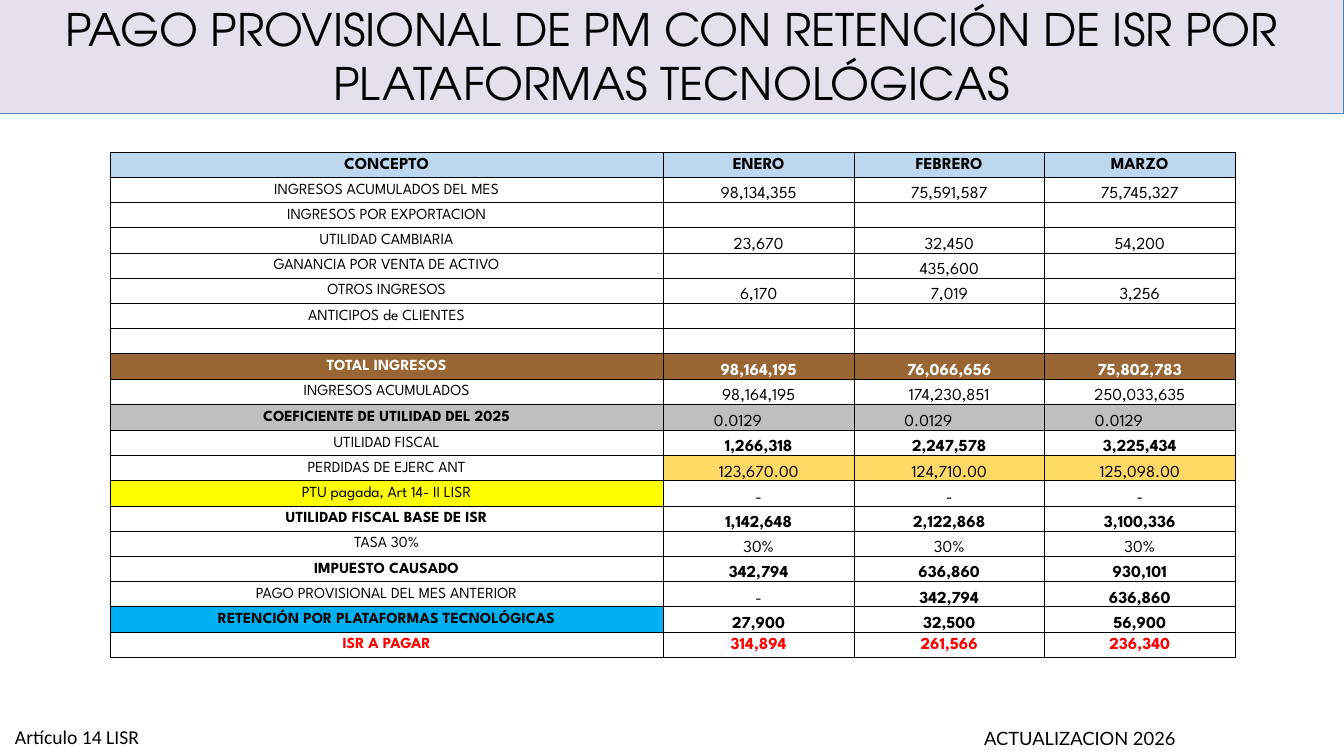
from lxml import etree
from pptx import Presentation
from pptx.dml.color import RGBColor
from pptx.enum import shapes, text
from pptx.oxml.ns import qn
from pptx.util import Inches, Pt

BLACK = RGBColor(0x00, 0x00, 0x00)
WHITE = RGBColor(0xFF, 0xFF, 0xFF)
RED = RGBColor(0xFF, 0x00, 0x00)
LILAC = RGBColor(0xE6, 0xE0, 0xEC)
BLUE = RGBColor(0x4F, 0x81, 0xBD)
PALE_BLUE = RGBColor(0xBD, 0xD7, 0xEE)
BROWN = RGBColor(0x99, 0x66, 0x33)
GRAY = RGBColor(0xBF, 0xBF, 0xBF)
GOLD = RGBColor(0xFF, 0xD9, 0x66)
YELLOW = RGBColor(0xFF, 0xFF, 0x00)
SKY = RGBColor(0x00, 0xB0, 0xF0)

HEADER = "CONCEPTO"
COEFFICIENT = "COEFICIENTE DE UTILIDAD DEL 2025"
TOTAL = "TOTAL INGRESOS"
PAYABLE = "ISR A PAGAR"
LOSSES = "PERDIDAS DE EJERC ANT"
PTU = "PTU pagada, Art 14- II LISR"
WITHHELD = "RETENCIÓN POR PLATAFORMAS TECNOLÓGICAS"
PREVIOUS = "PAGO PROVISIONAL DEL MES ANTERIOR"
PROFIT = "UTILIDAD FISCAL"
BASE = "UTILIDAD FISCAL BASE DE ISR"
TAX = "IMPUESTO CAUSADO"

# Concept followed by January, February and March
ROWS = [
    (HEADER, "ENERO", "FEBRERO", "MARZO"),
    ("INGRESOS ACUMULADOS DEL MES", "98,134,355", "75,591,587", "75,745,327"),
    ("INGRESOS POR EXPORTACION", "", "", ""),
    ("UTILIDAD CAMBIARIA", "23,670", "32,450", "54,200"),
    ("GANANCIA POR VENTA DE ACTIVO", "", "435,600", ""),
    ("OTROS INGRESOS", "6,170", "7,019", "3,256"),
    ("ANTICIPOS de CLIENTES", "", "", ""),
    ("", "", "", ""),
    (TOTAL, "98,164,195", "76,066,656", "75,802,783"),
    ("INGRESOS ACUMULADOS", "98,164,195", "174,230,851", "250,033,635"),
    (COEFFICIENT, "0.0129", "0.0129", "0.0129"),
    (PROFIT, "1,266,318", "2,247,578", "3,225,434"),
    (LOSSES, "123,670.00", "124,710.00", "125,098.00"),
    (PTU, "-", "-", "-"),
    (BASE, "1,142,648", "2,122,868", "3,100,336"),
    ("TASA 30%", "30%", "30%", "30%"),
    (TAX, "342,794", "636,860", "930,101"),
    (PREVIOUS, "-", "342,794", "636,860"),
    (WITHHELD, "27,900", "32,500", "56,900"),
    (PAYABLE, "314,894", "261,566", "236,340"),
]

# Fills of the concept cell and of the month cells, where not white
CONCEPT_FILLS = {HEADER: PALE_BLUE, TOTAL: BROWN, COEFFICIENT: GRAY,
                 PTU: YELLOW, WITHHELD: SKY}
MONTH_FILLS = {HEADER: PALE_BLUE, TOTAL: BROWN, COEFFICIENT: GRAY, LOSSES: GOLD}
TEXT_COLORS = {TOTAL: WHITE, PAYABLE: RED}
BOLD_CONCEPTS = {HEADER, TOTAL, COEFFICIENT, BASE, TAX, WITHHELD, PAYABLE}
BOLD_MONTHS = {HEADER, TOTAL, PROFIT, BASE, TAX, PREVIOUS, WITHHELD, PAYABLE}


def write(frame, words, font_name, size, color=BLACK, bold=False, align=None):
    paragraph = frame.paragraphs[0]
    paragraph.text = words
    paragraph.alignment = align
    font = paragraph.font
    font.name, font.size, font.bold = font_name, Pt(size), bold
    font.color.rgb = color
    if not words:  # keeps an empty row from growing
        paragraph._p.get_or_add_endParaRPr().set("sz", str(size * 100))


def set_margins(box, left, top, right, bottom):
    box.margin_left, box.margin_top = Inches(left), Inches(top)
    box.margin_right, box.margin_bottom = Inches(right), Inches(bottom)


def add_title(slide, words):
    band = slide.shapes.add_shape(shapes.MSO_SHAPE.RECTANGLE, Inches(0),
                                  Inches(-0.03), Inches(13.33), Inches(1.16))
    band.shadow.inherit = False
    band.fill.solid()
    band.fill.fore_color.rgb = LILAC
    band.line.color.rgb = BLUE
    band.line.width = Pt(0.75)
    frame = band.text_frame
    frame.word_wrap = True
    frame.vertical_anchor = text.MSO_ANCHOR.MIDDLE
    set_margins(frame, 0.13, 0.06, 0.13, 0.06)
    write(frame, words, "TeX Gyre Adventor", 32, align=text.PP_ALIGN.CENTER)


def add_note(slide, words, left, top, width, font_name, size, inset):
    note = slide.shapes.add_textbox(Inches(left), Inches(top),
                                    Inches(width), Inches(0.34))
    frame = note.text_frame
    frame.word_wrap = True
    set_margins(frame, inset, 0.05, inset, 0.05)
    write(frame, words, font_name, size)


def add_borders(cell):
    properties = cell._tc.get_or_add_tcPr()
    for side in ("a:lnL", "a:lnR", "a:lnT", "a:lnB"):
        border = etree.SubElement(properties, qn(side), w=str(Pt(0.5)))
        fill = etree.SubElement(border, qn("a:solidFill"))
        etree.SubElement(fill, qn("a:srgbClr"), val=str(BLACK))


def fill_cell(cell, concept, column, words):
    is_month = column > 0
    is_header = concept == HEADER
    is_coefficient = is_month and concept == COEFFICIENT
    bold = concept in (BOLD_MONTHS if is_month else BOLD_CONCEPTS) and words != "-"
    fills = MONTH_FILLS if is_month else CONCEPT_FILLS

    add_borders(cell)
    cell.fill.solid()
    cell.fill.fore_color.rgb = fills.get(concept, WHITE)
    set_margins(cell, 0.5 if is_coefficient else 0.01, 0.01, 0.01, 0)
    at_bottom = is_month and concept not in (HEADER, PAYABLE)
    cell.vertical_anchor = (text.MSO_ANCHOR.BOTTOM if at_bottom
                            else text.MSO_ANCHOR.MIDDLE)
    write(cell.text_frame, words, "League Spartan",
          12 if words and (is_month or is_header) else 11,
          TEXT_COLORS.get(concept, BLACK), bold,
          text.PP_ALIGN.LEFT if is_coefficient else text.PP_ALIGN.CENTER)


def add_payments_table(slide):
    table = slide.shapes.add_table(len(ROWS), 4, Inches(1.09), Inches(1.51),
                                   Inches(11.16), Inches(5.01)).table
    for column, width in zip(table.columns, (5.49, 1.89, 1.89, 1.89)):
        column.width = Inches(width)
    for row, values in zip(table.rows, ROWS):
        concept = values[0]
        row.height = Inches(0.26 if concept == COEFFICIENT else 0.25)
        for column, words in enumerate(values):
            fill_cell(row.cells[column], concept, column, words)


def main():
    deck = Presentation()
    deck.slide_width, deck.slide_height = Inches(13.33), Inches(7.5)
    slide = deck.slides.add_slide(deck.slide_layouts[6])

    # Heading
    add_title(slide, "PAGO PROVISIONAL DE PM CON RETENCIÓN DE ISR POR "
                     "PLATAFORMAS TECNOLÓGICAS")
    # Footer
    add_note(slide, "ACTUALIZACION 2026", 9.64, 7.17, 3.69, "Lato", 13.1, 0.12)
    add_note(slide, "Artículo 14 LISR", 0.05, 7.14, 2.99, "Calibri", 14, 0.1)
    # Provisional payments by month
    add_payments_table(slide)

    deck.save("out.pptx")


if __name__ == "__main__":
    main()
